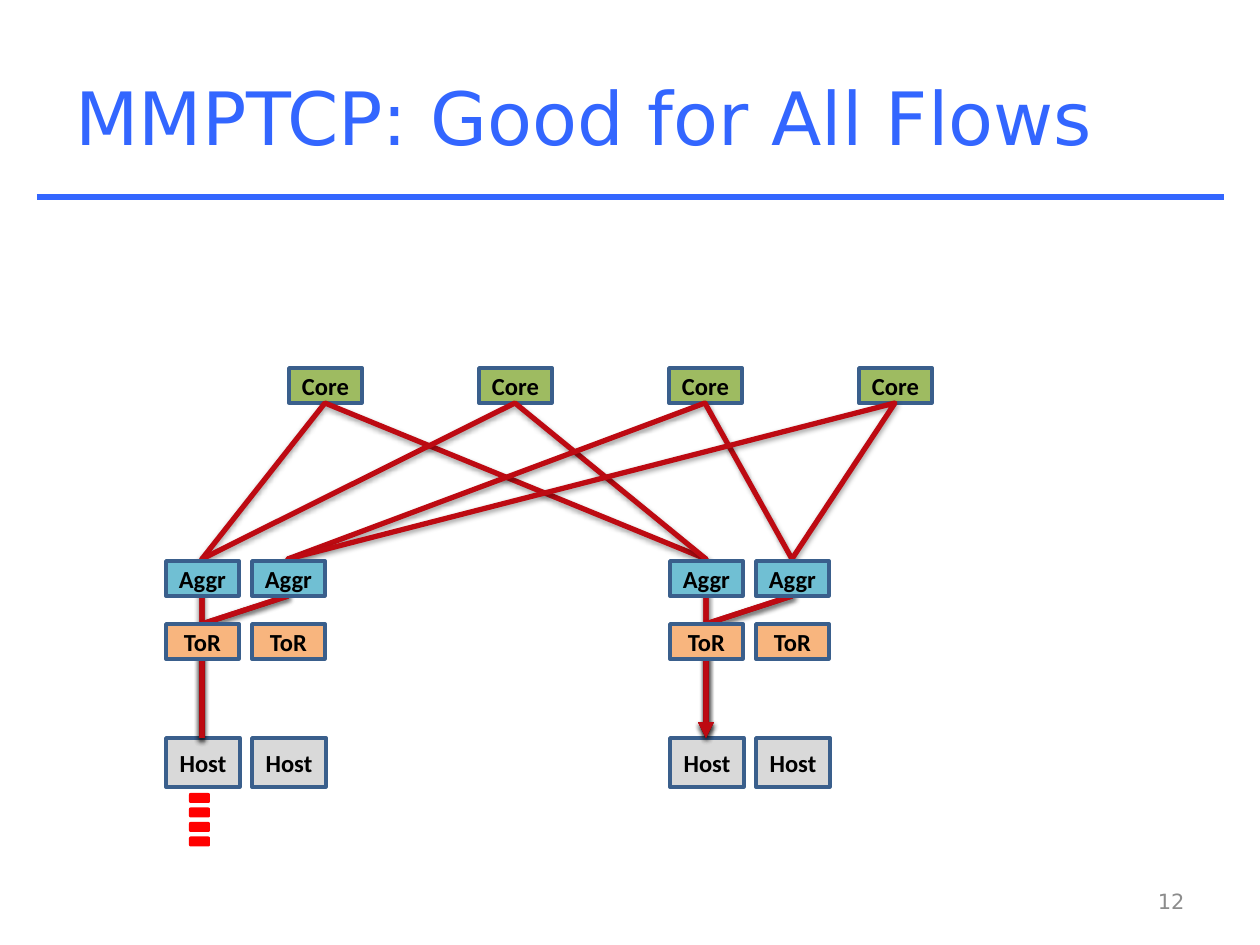
from lxml import etree
from pptx import Presentation
from pptx import util as u
from pptx.dml.color import RGBColor
from pptx.enum import shapes, text
from pptx.oxml import parse_xml
from pptx.oxml.ns import nsdecls, qn

BLUE = RGBColor(0x33, 0x66, 0xFF)
GREY = RGBColor(0x8C, 0x8C, 0x8C)
BLACK = RGBColor(0, 0, 0)
BORDER = RGBColor(0x3A, 0x5F, 0x8C)
ROUTE = RGBColor(0xBD, 0x0A, 0x12)
PACKET = RGBColor(0xFF, 0, 0)
GREEN = RGBColor(0x9E, 0xBB, 0x61)
TEAL = RGBColor(0x70, 0xBF, 0xD3)
ORANGE = RGBColor(0xF8, 0xB5, 0x7E)
SILVER = RGBColor(0xD9, 0xD9, 0xD9)

SCALE = u.Inches(1) / 126
NODE_W, NODE_H = 73, 35
HOST_W, HOST_H = 74, 49
PODS = [166, 670]
POD_STEP = 86
POD_LEFTS = [pod + i * POD_STEP for pod in PODS for i in range(2)]
CORE_LEFTS = [289 + i * 190 for i in range(4)]
CORE_TOP, AGGR_TOP, TOR_TOP, HOST_TOP = 368, 561, 624, 738

HOSTS = ("Host", SILVER, POD_LEFTS, HOST_TOP, HOST_W, HOST_H)
SWITCHES = [
    ("Core", GREEN, CORE_LEFTS, CORE_TOP, NODE_W, NODE_H),
    ("Aggr", TEAL, POD_LEFTS, AGGR_TOP, NODE_W, NODE_H),
    ("ToR", ORANGE, POD_LEFTS, TOR_TOP, NODE_W, NODE_H),
]
LABELS = [
    ("MMPTCP: Good for All Flows", (63, 38, 1134, 157), 42, BLUE, text.PP_ALIGN.LEFT),
    ("12", (903, 876, 294, 50), 12, GREY, text.PP_ALIGN.RIGHT),
]
PACKET_TOP, PACKET_STEP, PACKET_COUNT = 793, 14.5, 4


def px(*lengths):
    return [u.Emu(round(length * SCALE)) for length in lengths]


def add_label(page, words, bounds, size, color, align):
    box = page.shapes.add_textbox(*px(*bounds))
    frame = box.text_frame
    frame.word_wrap = True
    frame.vertical_anchor = text.MSO_ANCHOR.MIDDLE
    style_text(frame, words, "DejaVu Sans", size, color, align)


def style_text(frame, words, face, size, color, align, bold=False):
    para = frame.paragraphs[0]
    para.text = words
    para.alignment = align
    para.font.name = face
    para.font.size = u.Pt(size)
    para.font.bold = bold
    para.font.color.rgb = color


def add_nodes(page, words, fill, lefts, top, width, height):
    for left in lefts:
        box = page.shapes.add_shape(shapes.MSO_SHAPE.RECTANGLE, *px(left, top, width, height))
        box.shadow.inherit = False
        box.fill.solid()
        box.fill.fore_color.rgb = fill
        box.line.color.rgb = BORDER
        box.line.width = u.Pt(2)
        frame = box.text_frame
        frame.margin_left = frame.margin_right = frame.margin_top = frame.margin_bottom = 0
        frame.vertical_anchor = text.MSO_ANCHOR.MIDDLE
        style_text(frame, words, "Calibri", 14, BLACK, text.PP_ALIGN.CENTER, True)


def add_route(page, core):
    half = NODE_W // 2
    climbs = []
    for pod in PODS:
        tor_x = pod + half
        aggr_x = tor_x + core // 2 * POD_STEP
        climbs.append([(tor_x, HOST_TOP), (tor_x, TOR_TOP),
                       (aggr_x, AGGR_TOP + NODE_H), (aggr_x, AGGR_TOP - 2)])
    up, down = climbs
    peak = (CORE_LEFTS[core] + half, CORE_TOP + NODE_H)
    points = up + [peak] + down[::-1]
    builder = page.shapes.build_freeform(*points[0], scale=SCALE)
    builder.add_line_segments(points[1:], close=False)
    route = builder.convert_to_shape()
    route.fill.background()
    route.line.color.rgb = ROUTE
    route.line.width = u.Pt(3)
    etree.SubElement(route.line._get_or_add_ln(), qn("a:tailEnd"), type="triangle")
    route._element.spPr.append(parse_xml(
        f'<a:effectLst {nsdecls("a")}><a:outerShdw blurRad="{u.Pt(3.1)}" dist="{u.Pt(1.6)}" '
        'dir="5400000" rotWithShape="0"><a:srgbClr val="000000"><a:alpha val="38000"/>'
        '</a:srgbClr></a:outerShdw></a:effectLst>'))


def add_rule(page):
    rule = page.shapes.add_connector(shapes.MSO_CONNECTOR.STRAIGHT, *px(37, 197, 1224, 197))
    rule.line.color.rgb = BLUE
    rule.line.width = u.Pt(3)
    etree.SubElement(rule._element.spPr, qn("a:effectLst"))


def add_packets(page):
    for i in range(PACKET_COUNT):
        packet = page.shapes.add_shape(
            shapes.MSO_SHAPE.ROUNDED_RECTANGLE, *px(189, PACKET_TOP + i * PACKET_STEP, 21, 10))
        packet.shadow.inherit = False
        packet.fill.solid()
        packet.fill.fore_color.rgb = PACKET
        packet.line.fill.background()


def main():
    deck = Presentation()
    deck.slide_width, deck.slide_height = px(1260, 945)
    page = deck.slides.add_slide(deck.slide_layouts[6])
    add_rule(page)
    add_nodes(page, *HOSTS)
    for label in LABELS:
        add_label(page, *label)
    cores, *lower_switches = SWITCHES
    add_nodes(page, *cores)
    for core in range(len(CORE_LEFTS)):
        add_route(page, core)
    for row in lower_switches:
        add_nodes(page, *row)
    add_packets(page)
    deck.save("out.pptx")


if __name__ == "__main__":
    main()
